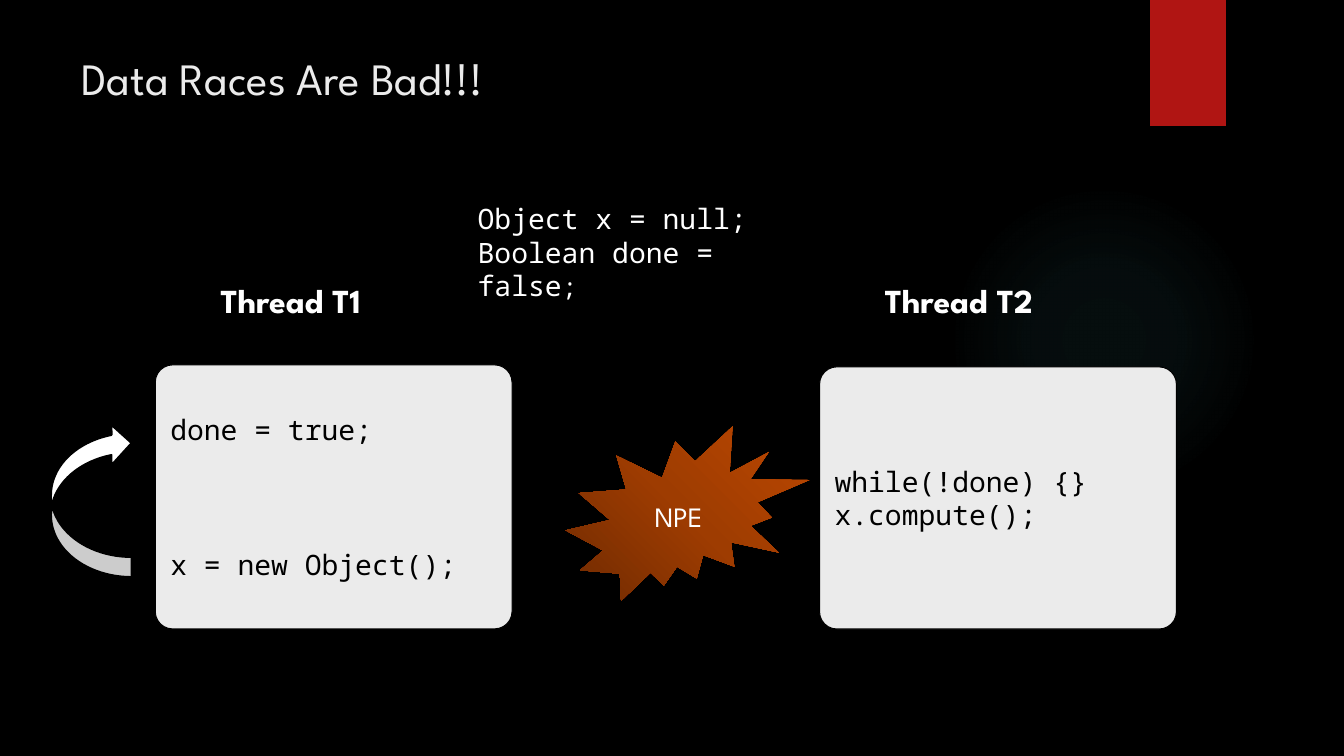
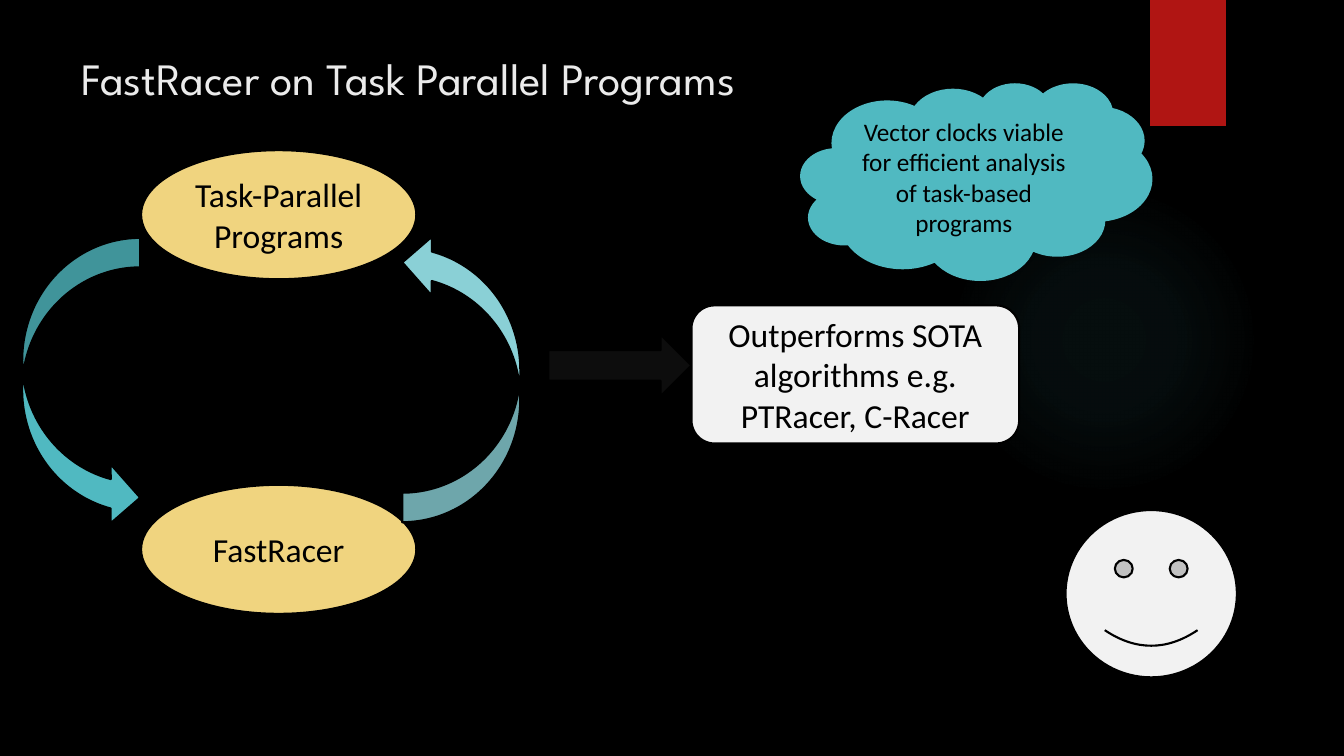
from lxml import etree
from pptx import Presentation
from pptx import util as u
from pptx.dml.color import RGBColor
from pptx.enum import shapes, text
from pptx.oxml import ns

WIDTH, HEIGHT = u.Inches(13.33), u.Inches(7.5)
COLORS = {
    "black": "000000", "white": "FFFFFF", "title": "EBEBEB", "band": "B01513",
    "card": "EBEBEB", "note": "F2F2F2", "oval": "F0D47F", "teal": "50B9C1",
    "pale_teal": "8AD0D6", "dark": "0D0D0D", "ember_dark": "6F2A01",
    "ember": "9E3C01", "ember_light": "BC4701",
}
HEAD, BODY, CODE = "League Spartan", "Calibri", "Noto Sans Mono"
CODE_LINE = u.Pt(24)
KIND = shapes.MSO_SHAPE


def rgb(name):
    return RGBColor.from_string(COLORS[name])


def place(left, top, width, height):
    """Turn percentages of the slide into lengths."""
    return [int(whole * share / 100) for whole, share in
            zip((WIDTH, HEIGHT, WIDTH, HEIGHT), (left, top, width, height))]


# Elements
def write(shape, lines, font, size, color, align=text.PP_ALIGN.LEFT,
          anchor=text.MSO_ANCHOR.TOP, bold=False, line_spacing=None):
    frame = shape.text_frame
    frame.word_wrap = True
    frame.vertical_anchor = anchor
    for number, line in enumerate(lines):
        paragraph = frame.add_paragraph() if number else frame.paragraphs[0]
        paragraph.add_run().text = line
        paragraph.alignment = align
        if line_spacing:
            paragraph.line_spacing = line_spacing
        paragraph.font.name = font
        paragraph.font.size = u.Pt(size)
        paragraph.font.bold = bold
        paragraph.font.color.rgb = rgb(color)
    return frame.paragraphs


def add_text(slide, area, lines, font, size, color, **style):
    return write(slide.shapes.add_textbox(*place(*area)), lines, font, size,
                 color, **style)


def add_figure(slide, kind, area, fill=None, line=None, line_width=1.5):
    shape = slide.shapes.add_shape(kind, *place(*area))
    shape.shadow.inherit = False
    if fill:
        shape.fill.solid()
        shape.fill.fore_color.rgb = rgb(fill)
    if line:
        shape.line.color.rgb = rgb(line)
        shape.line.width = u.Pt(line_width)
    else:
        shape.line.fill.background()
    return shape


def add_label_figure(slide, kind, area, fill, label, size=24, line="black"):
    shape = add_figure(slide, kind, area, fill, line)
    write(shape, [label], BODY, size, "black", text.PP_ALIGN.CENTER,
          text.MSO_ANCHOR.MIDDLE)


def fill_radial(shape, stops, focus):
    """Stops are (percent, colour, opacity); focus is l, t, r, b in percent."""
    gradient = etree.Element(ns.qn("a:gradFill"), rotWithShape="1")
    stop_list = etree.SubElement(gradient, ns.qn("a:gsLst"))
    for position, color, opacity in stops:
        stop = etree.SubElement(stop_list, ns.qn("a:gs"), pos=str(position * 1000))
        tint = etree.SubElement(stop, ns.qn("a:srgbClr"), val=COLORS[color])
        if opacity < 100:
            etree.SubElement(tint, ns.qn("a:alpha"), val=str(opacity * 1000))
    circle = etree.SubElement(gradient, ns.qn("a:path"))
    circle.set("path", "circle")
    etree.SubElement(circle, ns.qn("a:fillToRect"),
                     {side: str(share * 1000) for side, share in zip("ltrb", focus)})
    shape._element.spPr.find(ns.qn("a:prstGeom")).addnext(gradient)


def add_thread(slide, left, top, name, code):
    """Add a thread's heading and code card; return the code paragraphs."""
    card = add_figure(slide, KIND.ROUNDED_RECTANGLE, (left, top, 26.55, 83.2 - top),
                      "card", "black", 0.75)
    card.adjustments[0] = 0.066
    add_text(slide, (left + 4.12, 36.4, 19.13, 6.67), [name], HEAD, 24, "white",
             bold=True)
    return write(card, code, CODE, 20, "black", anchor=text.MSO_ANCHOR.MIDDLE,
                 line_spacing=CODE_LINE)


# Shared base: background, glow, band and title
def add_base(presentation, title):
    slide = presentation.slides.add_slide(presentation.slide_layouts[6])
    slide.background.fill.solid()
    slide.background.fill.fore_color.rgb = rgb("black")
    glow = add_figure(slide, KIND.OVAL, (70.58, 24.4, 23.1, 41.07))
    fill_radial(glow, [(0, "teal", 7), (36, "teal", 6), (69, "teal", 0)], [50] * 4)
    add_figure(slide, KIND.RECTANGLE, (85.58, 0, 5.63, 16.67), "band")
    add_text(slide, (5.33, 6, 77.18, 20.4), [title], HEAD, 32, "title")
    return slide


def build_races(presentation):
    slide = add_base(presentation, "Data Races Are Bad!!!")

    # Threads and the state they share
    first = add_thread(slide, 11.55, 48.27, "Thread T1",
                       ["done = true;", "x = new Object();"])
    first[1].space_before = 3 * CODE_LINE
    shared = add_text(slide, (34.8, 26, 27.08, 10.27),
                      ["Object x = null;", "Boolean done = false"],
                      CODE, 20, "white", line_spacing=CODE_LINE)
    semicolon = shared[1].add_run()
    semicolon.text = ";"
    semicolon.font.size = u.Pt(18)
    add_thread(slide, 60.98, 48.53, "Thread T2", ["while(!done) {}", "x.compute();"])

    # Reordering arrow and crash
    swap = add_figure(slide, KIND.CURVED_DOWN_ARROW, (1.05, 60.8, 11.48, 10.67),
                      "white", "black")
    swap.rotation = 270
    crash = add_figure(slide, KIND.EXPLOSION2, (42.08, 56.4, 18.15, 23.07))
    fill_radial(crash, [(0, "ember_dark", 100), (50, "ember", 100),
                        (100, "ember_light", 100)], (0, 100, 100, 0))
    write(crash, ["NPE"], HEAD, 20, "white", text.PP_ALIGN.CENTER,
          text.MSO_ANCHOR.MIDDLE)


def build_fastracer(presentation):
    slide = add_base(presentation, "FastRacer on Task Parallel Programs")

    # Cycle of programs and analysis
    for top, label in ((19.87, "Task-Parallel Programs"), (64.13, "FastRacer")):
        add_label_figure(slide, KIND.OVAL, (10.5, top, 20.48, 17.07), "oval", label)
    for left, top, fill, turn in ((1.65, 31.47, "teal", 0),
                                  (29.93, 30.8, "pale_teal", 180)):
        arrow = add_figure(slide, KIND.CURVED_RIGHT_ARROW, (left, top, 8.78, 38.27),
                           fill, "black")
        arrow.rotation = turn

    # Outcome
    add_figure(slide, KIND.RIGHT_ARROW, (40.8, 44.27, 10.65, 8.13), "dark", "black")
    add_figure(slide, KIND.SMILEY_FACE, (79.28, 67.47, 12.75, 22.13), "note", "black")
    add_label_figure(slide, KIND.ROUNDED_RECTANGLE, (51.45, 40.4, 24.38, 18.27),
                     "note", "Outperforms SOTA algorithms e.g. PTRacer, C-Racer")
    add_label_figure(slide, KIND.CLOUD, (59.63, 11.07, 26.03, 25.87), "teal",
                     "Vector clocks viable for efficient analysis of task-based programs",
                     size=18, line="teal")


def main():
    presentation = Presentation()
    presentation.slide_width, presentation.slide_height = WIDTH, HEIGHT
    build_races(presentation)
    build_fastracer(presentation)
    presentation.save("out.pptx")


if __name__ == "__main__":
    main()
